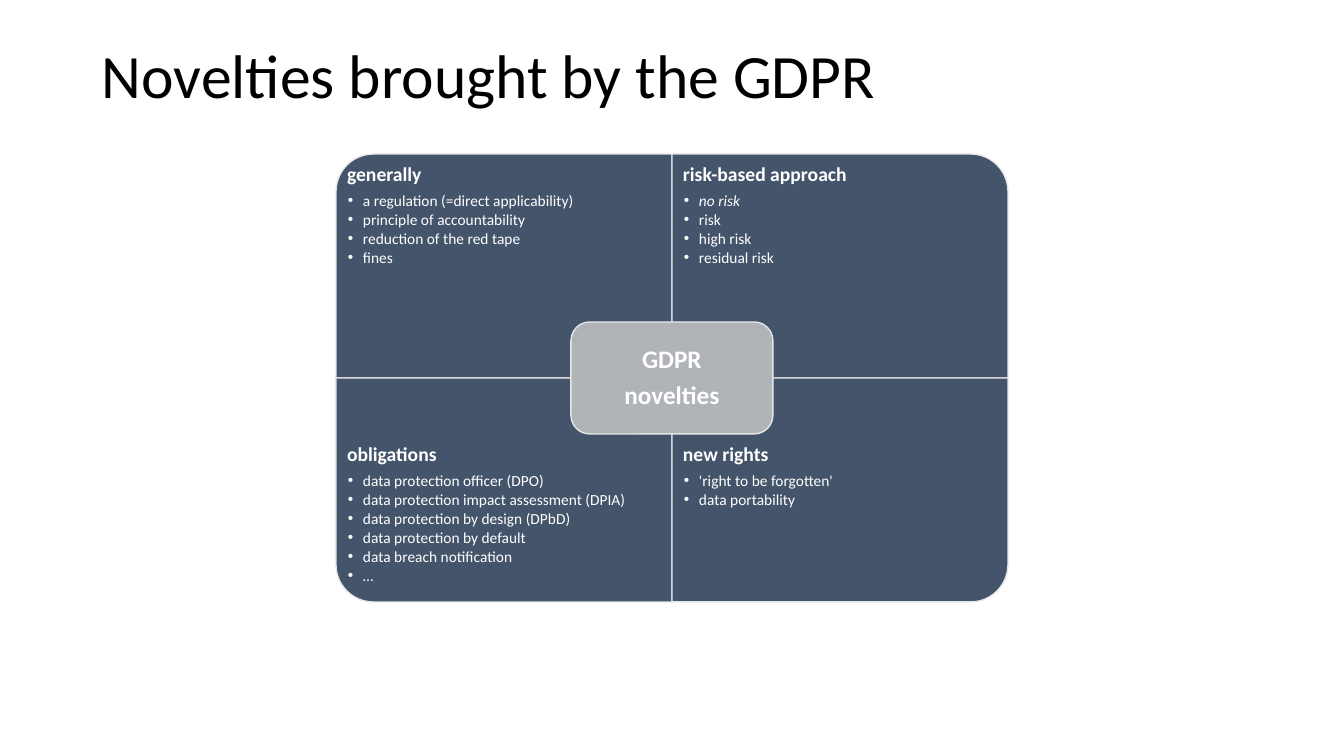
from pptx import Presentation
from pptx.dml.color import RGBColor
from pptx.enum.shapes import MSO_SHAPE as SHAPE
from pptx.enum.text import MSO_ANCHOR as ANCHOR, MSO_AUTO_SIZE as AUTOSIZE, PP_ALIGN as ALIGN
from pptx.oxml.ns import qn
from pptx.util import Emu, Pt
from lxml import etree

# Content
TITLE = "Novelties brought by the GDPR"
CENTRE = ["GDPR", "novelties"]
# column, row, rotation, heading, bullets
QUADRANTS = [
    (0, 0, 270, "generally", [
        "a regulation (=direct applicability)", "principle of accountability",
        "reduction of the red tape", "fines"]),
    (1, 0, 0, "risk-based approach", [
        "no risk", "risk", "high risk", "residual risk"]),
    (0, 1, 180, "obligations", [
        "data protection officer (DPO)",
        "data protection impact assessment (DPIA)",
        "data protection by design (DPbD)", "data protection by default",
        "data breach notification", "…"]),
    (1, 1, 90, "new rights", ["'right to be forgotten'", "data portability"]),
]
ITALIC = {"no risk"}

# Colours and lengths in px
NAVY = RGBColor(0x44, 0x54, 0x6A)
GREY = RGBColor(0xB0, 0xB4, 0xB9)
EDGE = RGBColor(0xE7, 0xE6, 0xE6)
WHITE = RGBColor(0xFF, 0xFF, 0xFF)
BLACK = RGBColor(0, 0, 0)
SLIDE_W, SLIDE_H = 1344, 756
LEFT, TOP = 336, 154
QUAD_W, QUAD_H, TEXT_H = 336, 224, 168
HUB_W, HUB_H = 202, 112
HEAD_GAP, BULLET_GAP = 0.35, 0.15  # space after, as a share of the font size


def px(n):
    return Emu(round(n * 12192000 / SLIDE_W))


def place(x, y, w, h):
    return [px(n) for n in (x, y, w, h)]


def set_frame(tf, inset, anchor=ANCHOR.TOP):
    frame = {"word_wrap": True, "auto_size": AUTOSIZE.NONE, "vertical_anchor": anchor}
    for side in ("left", "top", "right", "bottom"):
        frame["margin_" + side] = px(inset)
    for name, value in frame.items():
        setattr(tf, name, value)


def write(p, text, size, gap=0, color=WHITE, align=ALIGN.LEFT, bold=False, italic=False):
    for name, value in {"alignment": align, "line_spacing": 0.9,
                        "space_before": Pt(0), "space_after": Pt(size * gap)}.items():
        setattr(p, name, value)
    r = p.add_run()
    r.text = text
    for name, value in {"name": "Calibri", "size": Pt(size),
                        "bold": bold, "italic": italic}.items():
        setattr(r.font, name, value)
    r.font.color.rgb = color


def add_bullet(p):
    p.level = 1
    pPr = p._p.get_or_add_pPr()
    pPr.set("marL", str(px(16)))
    pPr.set("indent", str(-px(15)))
    etree.SubElement(pPr, qn("a:buFont")).set("typeface", "Arial")
    etree.SubElement(pPr, qn("a:buChar")).set("char", "•")


def add_block(shapes, kind, box, fill):
    sp = shapes.add_shape(kind, *place(*box))
    sp.shadow.inherit = False
    sp.fill.solid()
    sp.fill.fore_color.rgb = fill
    sp.line.color.rgb = EDGE
    sp.line.width = Pt(1)
    return sp


def add_quadrant(shapes, col, row, rotation, heading, bullets):
    x, y = LEFT + col * QUAD_W, TOP + row * QUAD_H
    # A quarter turn swaps width and height around the same middle
    w, h = (QUAD_H, QUAD_W) if rotation % 180 else (QUAD_W, QUAD_H)
    box = x + (QUAD_W - w) // 2, y + (QUAD_H - h) // 2, w, h
    add_block(shapes, SHAPE.ROUND_1_RECTANGLE, box, NAVY).rotation = rotation

    text_y = y + row * (QUAD_H - TEXT_H)
    tf = shapes.add_textbox(*place(x, text_y, QUAD_W, TEXT_H)).text_frame
    set_frame(tf, 11)
    write(tf.paragraphs[0], heading, 14, HEAD_GAP, bold=True)
    for text in bullets:
        p = tf.add_paragraph()
        write(p, text, 11, BULLET_GAP, italic=text in ITALIC)
        add_bullet(p)


def main():
    prs = Presentation()
    prs.slide_width, prs.slide_height = px(SLIDE_W), px(SLIDE_H)
    s = prs.slides.add_slide(prs.slide_layouts[5])

    # Title
    title = s.shapes.title
    title.left, title.top, title.width, title.height = place(92, 40, 1159, 146)
    set_frame(title.text_frame, 5)
    title.text_frame.margin_left = px(10)
    write(title.text_frame.paragraphs[0], TITLE, 44, color=BLACK)

    # Four quadrants
    for quadrant in QUADRANTS:
        add_quadrant(s.shapes, *quadrant)

    # Centre block
    box = LEFT + QUAD_W - HUB_W // 2, TOP + QUAD_H - HUB_H // 2, HUB_W, HUB_H
    tf = add_block(s.shapes, SHAPE.ROUNDED_RECTANGLE, box, GREY).text_frame
    set_frame(tf, 7, ANCHOR.MIDDLE)
    for i, text in enumerate(CENTRE):
        p = tf.add_paragraph() if i else tf.paragraphs[0]
        write(p, text, 18, HEAD_GAP, align=ALIGN.CENTER, bold=True)

    prs.save("out.pptx")


if __name__ == "__main__":
    main()
